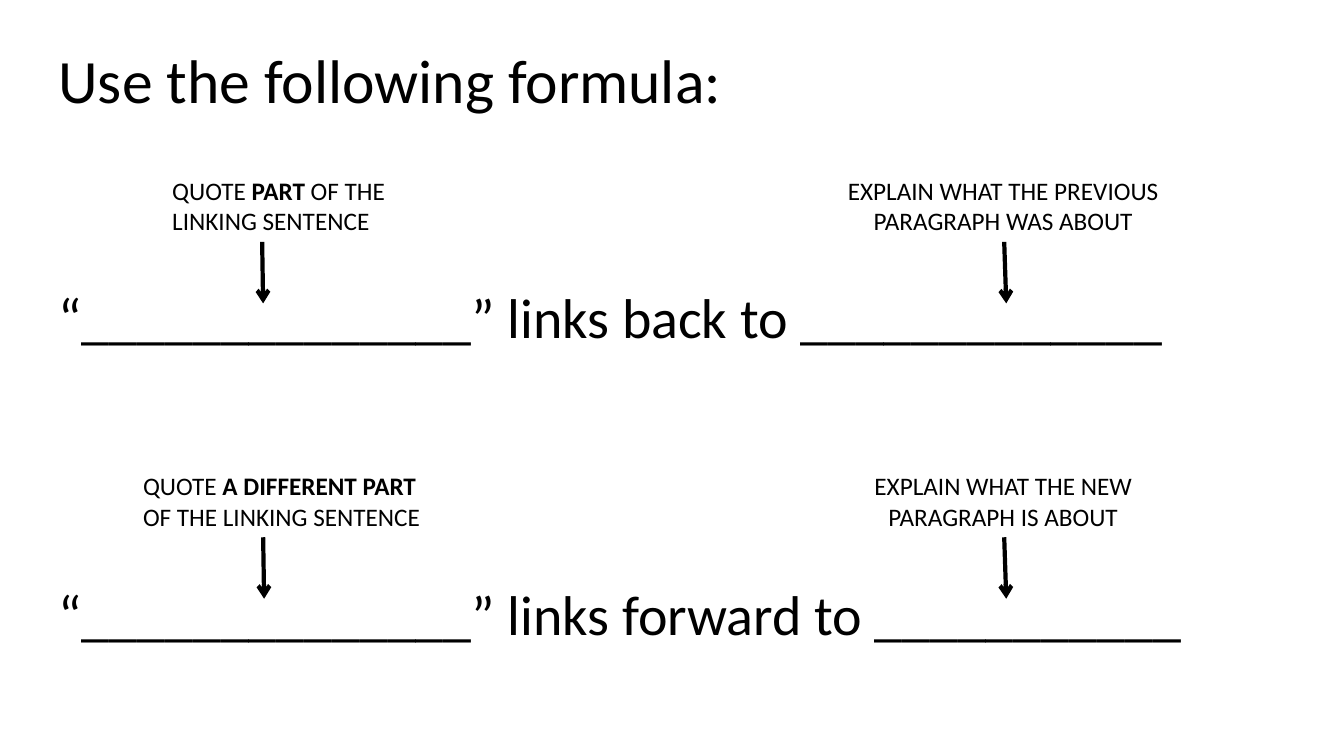
import pptx
import pptx.dml.color
import pptx.enum.shapes
import pptx.enum.text
import pptx.oxml.ns
import pptx.oxml.xmlchemy
import pptx.util
from lxml import etree

Inches = pptx.util.Inches
Pt = pptx.util.Pt
Align = pptx.enum.text.PP_ALIGN
qn = pptx.oxml.ns.qn

BLACK = pptx.dml.color.RGBColor(0x00, 0x00, 0x00)
FONT = "Calibri"
LABEL_TOPS = (1.69, 4.62)
LABEL_HEIGHT = 0.71
ARROW_DROP = 0.61


def write(para, text, size=18, bold=False):
    span = para.add_run()
    span.text = text
    span.font.name = FONT
    span.font.size = Pt(size)
    span.font.bold = bold
    span.font.color.rgb = BLACK


deck = pptx.Presentation()
deck.slide_width = Inches(13.33)
deck.slide_height = Inches(7.5)
page = deck.slides.add_slide(deck.slide_layouts[1])
title = page.shapes.title
title.element.getparent().remove(title.element)

# Heading and the two formula sentences
body = page.placeholders[1]
body.left, body.top = Inches(0.48), Inches(0.45)
body.width, body.height = Inches(12.72), Inches(7.05)
frame = body.text_frame
frame.auto_size = pptx.enum.text.MSO_AUTO_SIZE.NONE
frame.vertical_anchor = pptx.enum.text.MSO_ANCHOR.TOP
sentences = [
    ("Use the following formula:", 44, 0),
    ("“______________” links back to _____________", 40, 124),
    ("“______________” links forward to ___________", 40, 169),
]
for index, (text, size, space) in enumerate(sentences):
    para = frame.paragraphs[0] if index == 0 else frame.add_paragraph()
    properties = para._p.get_or_add_pPr()
    properties.set("marL", "0")
    properties.set("indent", "0")
    etree.SubElement(properties, qn("a:buNone"))
    para.alignment = Align.LEFT
    para.line_spacing = 0.9
    para.space_before = Pt(space)
    write(para, text, size=size)

# Labels over the blanks: row, left, width, alignment, (text, bold) spans
labels = [
    (0, 1.61, 2.38, Align.LEFT,
     [("QUOTE ", False), ("PART", True), (" OF THE LINKING SENTENCE", False)]),
    (1, 1.32, 2.95, Align.LEFT,
     [("QUOTE ", False), ("A DIFFERENT PART", True), (" OF THE LINKING SENTENCE", False)]),
    (0, 8.26, 3.38, Align.CENTER,
     [("EXPLAIN WHAT THE PREVIOUS PARAGRAPH WAS ABOUT", False)]),
    (1, 8.26, 3.38, Align.CENTER,
     [("EXPLAIN WHAT THE NEW PARAGRAPH IS ABOUT", False)]),
]
for row, left, width, alignment, spans in labels:
    box = page.shapes.add_textbox(
        Inches(left), Inches(LABEL_TOPS[row]), Inches(width), Inches(LABEL_HEIGHT))
    box.text_frame.word_wrap = True
    para = box.text_frame.paragraphs[0]
    para.alignment = alignment
    for text, bold in spans:
        write(para, text, bold=bold)

# Arrows from each label down to its blank
for row, start, end in [(0, 2.6, 2.61), (1, 2.61, 2.62), (0, 9.96, 9.98), (1, 9.96, 9.98)]:
    top = LABEL_TOPS[row] + LABEL_HEIGHT
    arrow = page.shapes.add_connector(
        pptx.enum.shapes.MSO_CONNECTOR.STRAIGHT,
        Inches(start), Inches(top), Inches(end), Inches(top + ARROW_DROP))
    arrow.line.color.rgb = BLACK
    arrow.line.width = Pt(3)
    etree.SubElement(arrow.line._get_or_add_ln(), qn("a:tailEnd"), type="arrow")
    etree.SubElement(arrow._element.spPr, qn("a:effectLst"))

deck.save("out.pptx")
